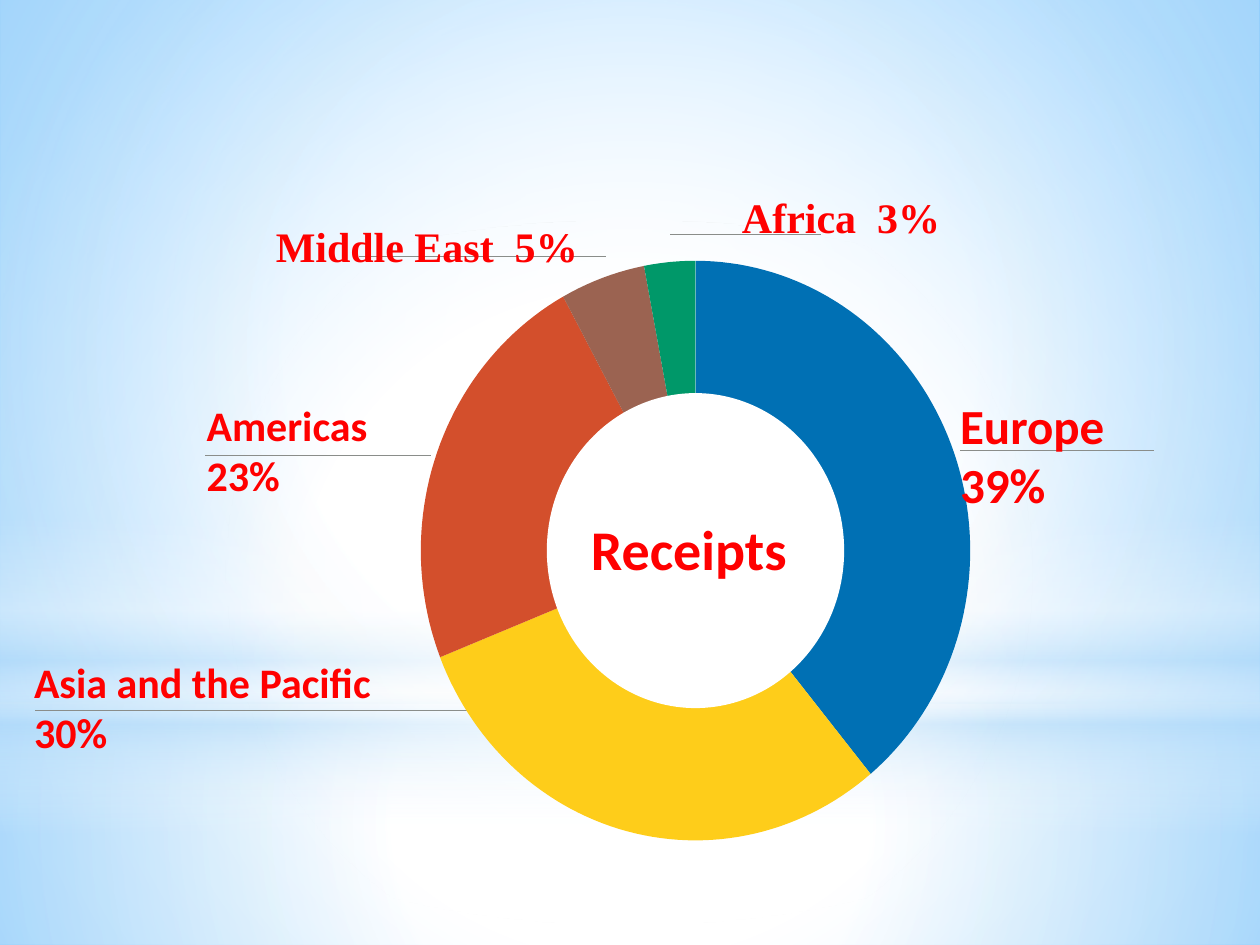
"""Build a slide with a doughnut of tourism receipts by world region."""
from math import cos, pi, sin

from lxml import etree
from pptx import Presentation
from pptx.dml.color import RGBColor
from pptx.enum.shapes import MSO_CONNECTOR, MSO_SHAPE
from pptx.enum.text import MSO_AUTO_SIZE
from pptx.oxml.ns import qn
from pptx.util import Inches, Pt

RECT, OVAL, STRAIGHT = MSO_SHAPE.RECTANGLE, MSO_SHAPE.OVAL, MSO_CONNECTOR.STRAIGHT
NO_FIT, GROW = MSO_AUTO_SIZE.NONE, MSO_AUTO_SIZE.SHAPE_TO_FIT_TEXT

THEME = {
    "text": "FF0000", "rule": "8A8D8A", "white": "FFFFFF", "pale": "B4DCFA", "sky": "63BCFF",
    "europe": "0070B4", "asia": "FECD1A", "americas": "D34F2C",
    "middle_east": "9B6351", "africa": "009869",
    "sans": "Calibri", "serif": "Times New Roman",
    "label": 24, "large": 28, "title": 32,
}


def set_gradient(fill, root, stops, centre=None):
    """Fill with (position, colour, opacity) stops, around a centre or top to bottom."""
    fill.solid()
    solid = root.find(".//" + qn("a:solidFill"))
    grad = etree.Element(qn("a:gradFill"), rotWithShape="1")
    gs_list = etree.SubElement(grad, qn("a:gsLst"))
    for pos, color, opacity in stops:
        gs = etree.SubElement(gs_list, qn("a:gs"), pos=str(pos * 1000))
        clr = etree.SubElement(gs, qn("a:srgbClr"), val=THEME[color])
        if opacity < 100:
            etree.SubElement(clr, qn("a:alpha"), val=str(opacity * 1000))
    if centre:
        path = etree.SubElement(grad, qn("a:path"), path="circle")
        sides = {side: str(v * 1000) for side, v in zip("ltrb", centre)}
        etree.SubElement(path, qn("a:fillToRect"), **sides)
    else:
        etree.SubElement(grad, qn("a:lin"), ang="5400000", scaled="0")
    solid.getparent().replace(solid, grad)


def add_text(s, text, x, y, w, h, size="label", font="sans", inset=(0, 0), wrap=True, fit=NO_FIT):
    """Add a bold label in the text colour."""
    tf = s.shapes.add_textbox(Inches(x), Inches(y), Inches(w), Inches(h)).text_frame
    tf.margin_left = tf.margin_right = Inches(inset[0])
    tf.margin_top = tf.margin_bottom = Inches(inset[1])
    tf.word_wrap, tf.auto_size = wrap, fit
    r = tf.paragraphs[0].add_run()
    r.text = text
    r.font.name, r.font.size, r.font.bold = THEME[font], Pt(THEME[size]), True
    r.font.color.rgb = RGBColor.from_string(THEME["text"])


prs = Presentation()
prs.slide_width, prs.slide_height = Inches(10), Inches(7.5)
s = prs.slides.add_slide(prs.slide_layouts[6])

MIDDLE = (50, 50, 50, 50)
set_gradient(s.background.fill, s._element,
             [(0, "white", 100), (42, "white", 100), (100, "sky", 100)], (24, 44, 24, 12))
backdrop = [
    (RECT, 5.58, 1.92, [(0, "white", 91), (37, "white", 76), (100, "pale", 79)], MIDDLE),
    (RECT, 0, 5.58, [(0, "white", 89), (48, "white", 62), (100, "pale", 79)], MIDDLE),
    (RECT, 4.12, 2.5, [(0, "white", 0), (29, "white", 30), (45, "pale", 40),
                       (55, "white", 26), (65, "pale", 60), (100, "white", 0)], None),
    (OVAL, 1.75, 5.58, [(0, "white", 100), (56, "white", 0)], MIDDLE),
]
for kind, y, h, stops, centre in backdrop:
    sp = s.shapes.add_shape(kind, 0, Inches(y), Inches(10), Inches(h))
    sp.shadow.inherit = False
    set_gradient(sp.fill, sp._element.spPr, stops, centre)
    sp.line.fill.background()

for x1, x2, y in [(7.62, 9.16, 3.57), (5.32, 6.52, 1.86), (2.85, 4.81, 2.03),
                  (1.63, 3.42, 3.61), (0.28, 3.92, 5.64)]:
    rule = s.shapes.add_connector(STRAIGHT, Inches(x1), Inches(y), Inches(x2), Inches(y))
    rule.line.color.rgb = RGBColor.from_string(THEME["rule"])
    rule.line.width = Pt(0.25)
    etree.SubElement(rule._element.spPr, qn("a:effectLst"))

CX, CY, RX, RY = 5.52, 4.37, 2.18, 2.3
HOLE_RX, HOLE_RY = 1.18, 1.25
shares = [("europe", 39), ("asia", 30), ("americas", 23), ("middle_east", 5), ("africa", 3)]
start = 0
for region, share in shares:
    angles = [2 * pi * (start + i / 2) / 100 for i in range(2 * share + 1)]
    arc = [(Inches(CX + RX * sin(a)), Inches(CY - RY * cos(a))) for a in angles]
    builder = s.shapes.build_freeform(Inches(CX), Inches(CY))
    builder.add_line_segments(arc, close=True)
    sp = builder.convert_to_shape()
    sp.shadow.inherit = False
    sp.fill.solid()
    sp.fill.fore_color.rgb = RGBColor.from_string(THEME[region])
    sp.line.fill.background()
    start += share

hole = s.shapes.add_shape(OVAL, Inches(CX - HOLE_RX), Inches(CY - HOLE_RY),
                          Inches(2 * HOLE_RX), Inches(2 * HOLE_RY))
hole.shadow.inherit = False
hole.fill.solid()
hole.fill.fore_color.rgb = RGBColor.from_string(THEME["white"])
hole.line.fill.background()

add_text(s, "Americas 23%", 1.64, 3.17, 1.81, 0.35)
add_text(s, "Europe 39%", 7.62, 3.14, 1.55, 0.35, size="large")
add_text(s, "Receipts", 4.69, 4.08, 1.67, 0.48, size="title")
add_text(s, "Asia and the Pacific 30%", 0.27, 5.21, 3.08, 0.35)
for text, x, y, w in [("Middle East  5%", 2.09, 1.7, 2.62), ("Africa  3%", 5.79, 1.47, 1.79)]:
    add_text(s, text, x, y, w, 0.5, font="serif", inset=(0.1, 0.05), wrap=False, fit=GROW)

prs.save("out.pptx")
